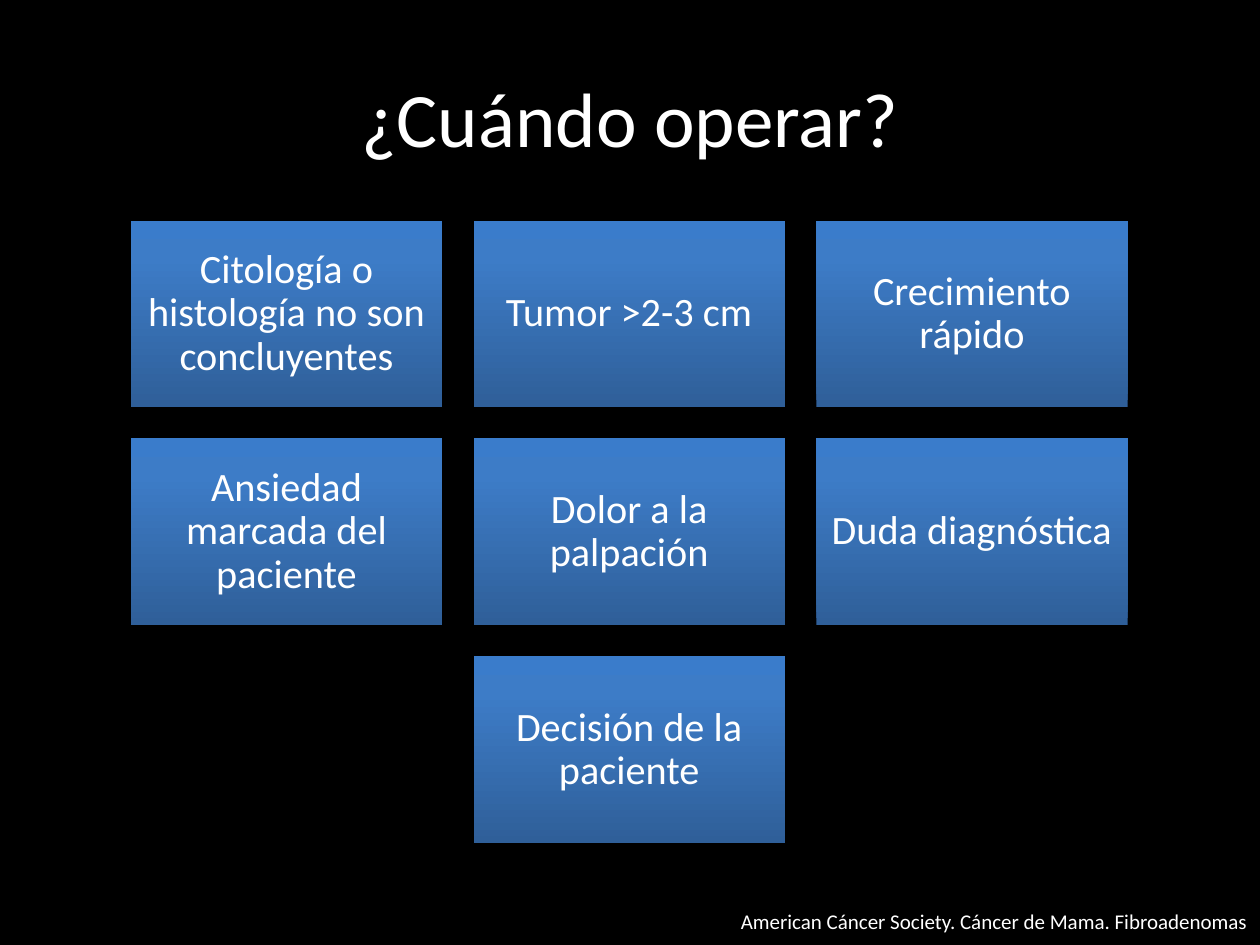
from copy import deepcopy

from pptx import Presentation
from pptx.dml.color import RGBColor
from pptx.enum.shapes import MSO_SHAPE
from pptx.enum.text import MSO_ANCHOR, PP_ALIGN
from pptx.oxml.ns import qn
from pptx.util import Inches, Pt

RECTANGLE = MSO_SHAPE.RECTANGLE
MIDDLE, TOP = MSO_ANCHOR.MIDDLE, MSO_ANCHOR.TOP
CENTER, RIGHT = PP_ALIGN.CENTER, PP_ALIGN.RIGHT
TITLE_ONLY = 5

COLORS = {
    "background": "000000",
    "text": "FFFFFF",
    "card_bottom": "2F5F99",
    "card_middle": "3D7CC7",
    "card_top": "3A7CCB",
}
FONT = "Calibri"

CARD_WIDTH, CARD_HEIGHT, GAP = 2.47, 1.48, 0.25
GRID_LEFT, GRID_TOP = 1.04, 1.75
REASONS = [
    ["Citología o histología no son concluyentes", "Tumor >2-3 cm", "Crecimiento rápido"],
    ["Ansiedad marcada del paciente", "Dolor a la palpación", "Duda diagnóstica"],
    ["Decisión de la paciente"],
]


def color(name):
    return RGBColor.from_string(COLORS[name])


class SlideBuilder:
    """Holds the slide and the style shared by its elements."""

    def __init__(self, presentation):
        self.slide = presentation.slides.add_slide(presentation.slide_layouts[TITLE_ONLY])
        background = self.slide.background.fill
        background.solid()
        background.fore_color.rgb = color("background")

    def set_text(self, shape, text, size, alignment, anchor):
        frame = shape.text_frame
        frame.text = text
        frame.word_wrap = True
        frame.vertical_anchor = anchor
        paragraph = frame.paragraphs[0]
        paragraph.alignment = alignment
        font = paragraph.runs[0].font
        font.name, font.size = FONT, Pt(size)
        font.color.rgb = color("text")
        return paragraph

    def title(self, text, left, top, width, height):
        shape = self.slide.shapes.title
        shape.left, shape.top = Inches(left), Inches(top)
        shape.width, shape.height = Inches(width), Inches(height)
        self.set_text(shape, text, 44, CENTER, MIDDLE)

    def card(self, text, column, row):
        """Add a gradient card; column may be fractional to centre a short row."""
        shape = self.slide.shapes.add_shape(
            RECTANGLE,
            Inches(GRID_LEFT + column * (CARD_WIDTH + GAP)),
            Inches(GRID_TOP + row * (CARD_HEIGHT + GAP)),
            Inches(CARD_WIDTH),
            Inches(CARD_HEIGHT),
        )
        shape.shadow.inherit = False
        shape.line.fill.background()
        self.fill_gradient(shape)
        frame = shape.text_frame
        frame.margin_left = frame.margin_right = Inches(0.1)
        frame.margin_top = frame.margin_bottom = Inches(0.1)
        self.set_text(shape, text, 23, CENTER, MIDDLE).line_spacing = 0.9

    def fill_gradient(self, shape):
        shape.fill.gradient()
        shape.fill.gradient_angle = 90
        stop_list = shape._element.spPr.find(qn("a:gradFill")).find(qn("a:gsLst"))
        stop_list.append(deepcopy(stop_list[-1]))
        stops = [(0, "card_bottom"), (0.8, "card_middle"), (1, "card_top")]
        for stop, (position, name) in zip(shape.fill.gradient_stops, stops):
            stop.position = position
            stop.color.rgb = color(name)

    def source(self, text, left, top, width, height):
        shape = self.slide.shapes.add_textbox(
            Inches(left), Inches(top), Inches(width), Inches(height)
        )
        self.set_text(shape, text, 12, RIGHT, TOP)


def main():
    presentation = Presentation()
    presentation.slide_width, presentation.slide_height = Inches(10), Inches(7.5)
    builder = SlideBuilder(presentation)
    builder.title("¿Cuándo operar?", 0.5, 0.3, 9, 1.25)
    columns = len(REASONS[0])
    for row, reasons in enumerate(REASONS):
        first_column = (columns - len(reasons)) / 2
        for index, reason in enumerate(reasons):
            builder.card(reason, first_column + index, row)
    builder.source(
        "American Cáncer Society. Cáncer de Mama. Fibroadenomas", 0.04, 7.16, 9.96, 0.3
    )
    presentation.save("out.pptx")


if __name__ == "__main__":
    main()
